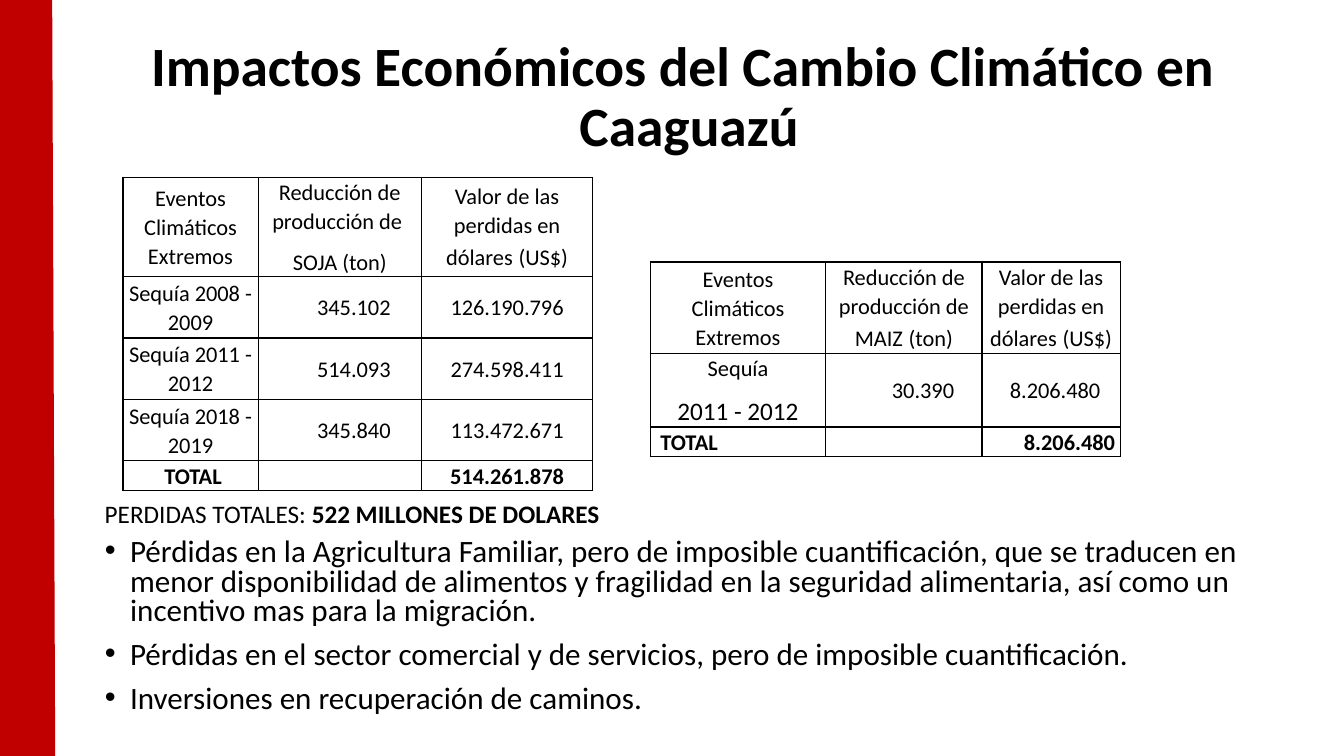
from lxml import etree
from pptx import Presentation
from pptx.dml.color import RGBColor
from pptx.enum import shapes, text
from pptx.oxml import ns
from pptx.util import Inches, Pt

COLORS = {"text": "000000", "grid": "000000", "band": "C00000"}
FONT = "Calibri"
CENTER, LEFT, RIGHT = text.PP_ALIGN.CENTER, text.PP_ALIGN.LEFT, text.PP_ALIGN.RIGHT
MIDDLE, TOP = text.MSO_ANCHOR.MIDDLE, text.MSO_ANCHOR.TOP
CELL_MARGIN = 0.05

TITLE = ["Impactos Económicos del Cambio Climático en ", "Caaguazú"]
TOTAL_LOSS = [("PERDIDAS TOTALES: ", False), ("522 MILLONES DE DOLARES", True)]
BULLETS = [
    "Pérdidas en la Agricultura Familiar, pero de imposible cuantificación, que se traducen en "
    "menor disponibilidad de alimentos y fragilidad en la seguridad alimentaria, así como un "
    "incentivo mas para la migración.",
    "Pérdidas en el sector comercial y de servicios, pero de imposible cuantificación.",
    "Inversiones en recuperación de caminos.",
]

# A cell is a list of paragraphs; a paragraph is a list of (text, size) runs.
EVENTS = [[("Eventos Climáticos Extremos", 16)]]
VALUE = [[("Valor de las perdidas en dólares", 16), (" ", 18), ("(US$)", 16)]]


def plain(words):
    return [[(words, 16)]]


SOY = {
    "place": (1.22, 1.76), "cols": [1.34, 1.62, 1.7], "rows": [0.83, 0.61, 0.61, 0.61, 0.24],
    "cells": [
        [EVENTS, [[("Reducción de producción de ", 16)], [("SOJA (ton)", 16)]], VALUE],
        [plain("Sequía 2008 - 2009"), plain("345.102"), plain("126.190.796")],
        [plain("Sequía 2011 - 2012"), plain("514.093"), plain("274.598.411")],
        [plain("Sequía 2018 - 2019"), plain("345.840"), plain("113.472.671")],
        [plain("TOTAL"), [], plain("514.261.878")],
    ],
    "indents": [0, 0.28, 0], "total_indent": 0.05,
    "total_align": [CENTER, CENTER, CENTER], "event_anchor": MIDDLE,
}
MAIZE = {
    "place": (6.45, 2.6), "cols": [1.74, 1.55, 1.37], "rows": [0.82, 0.63, 0.25],
    "cells": [
        [EVENTS, [[("Reducción de producción de MAIZ", 16), (" ", 18), ("(ton)", 16)]], VALUE],
        [[[("Sequía", 16)], [("2011 - 2012", 18)]], plain("30.390"), plain("8.206.480")],
        [plain("TOTAL"), [], plain("8.206.480")],
    ],
    "indents": [0, 0.38, 0.08], "total_indent": 0.05,
    "total_align": [LEFT, CENTER, RIGHT], "event_anchor": TOP,
}


def color(name):
    return RGBColor.from_string(COLORS[name])


def add_run(para, words, size, bold=False):
    span = para.add_run()
    span.text = words
    span.font.name = FONT
    span.font.size = Pt(size)
    span.font.bold = bold
    span.font.color.rgb = color("text")


def place(shape, left, top, width, height):
    shape.left, shape.top = Inches(left), Inches(top)
    shape.width, shape.height = Inches(width), Inches(height)


def draw_borders(cell):
    properties = cell._tc.get_or_add_tcPr()
    for index, side in enumerate(("lnL", "lnR", "lnT", "lnB")):
        line = etree.Element(ns.qn("a:" + side), w=str(Pt(1)))
        fill = etree.SubElement(line, ns.qn("a:solidFill"))
        etree.SubElement(fill, ns.qn("a:srgbClr"), val=COLORS["grid"])
        properties.insert(index, line)


def fill_cell(cell, paragraphs, align, anchor, indent, bold):
    cell.margin_left = Inches(CELL_MARGIN + indent)
    cell.margin_right = Inches(CELL_MARGIN)
    cell.margin_top = cell.margin_bottom = 0
    cell.vertical_anchor = anchor
    cell.fill.background()
    draw_borders(cell)
    frame = cell.text_frame
    if not paragraphs:
        frame.paragraphs[0]._p.get_or_add_endParaRPr().set("sz", "1600")
    for number, runs in enumerate(paragraphs):
        para = frame.add_paragraph() if number else frame.paragraphs[0]
        para.alignment = align
        para.line_spacing = 1.07
        para.space_after = Pt(8)
        for words, size in runs:
            add_run(para, words, size, bold)


def add_loss_table(page, data):
    cols, rows = data["cols"], data["rows"]
    left, top = data["place"]
    table = page.shapes.add_table(len(rows), len(cols), Inches(left), Inches(top),
                                  Inches(sum(cols)), Inches(sum(rows))).table
    table.first_row = table.horz_banding = False
    for column, width in zip(table.columns, cols):
        column.width = Inches(width)
    for row, height in zip(table.rows, rows):
        row.height = Inches(height)
    last = len(rows) - 1
    for r, line in enumerate(data["cells"]):
        for c, paragraphs in enumerate(line):
            align = data["total_align"][c] if r == last else CENTER
            anchor = data["event_anchor"] if c == 0 and 0 < r < last else MIDDLE
            indent = data["indents"][c] if 0 < r < last else 0
            if r == last and c == 0:
                indent = data["total_indent"]
            fill_cell(table.cell(r, c), paragraphs, align, anchor, indent, r == last)


def write_title(box):
    place(box, 1.22, 0.19, 11.23, 1.58)
    frame = box.text_frame
    frame.auto_size = text.MSO_AUTO_SIZE.NONE
    frame.vertical_anchor = MIDDLE
    para = frame.paragraphs[0]
    para.alignment = CENTER
    para.line_spacing = 0.9
    for number, words in enumerate(TITLE):
        if number:
            para.add_line_break()
        add_run(para, words, 39.6, True)


def write_bullets(box):
    place(box, 0.94, 5.29, 11.5, 1.89)
    frame = box.text_frame
    frame.auto_size = text.MSO_AUTO_SIZE.NONE
    for number, words in enumerate(BULLETS):
        para = frame.add_paragraph() if number else frame.paragraphs[0]
        para.line_spacing = 0.8
        para.space_before = Pt(10)
        properties = para._p.get_or_add_pPr()
        properties.set("marL", str(Inches(0.25)))
        properties.set("indent", str(Inches(-0.25)))
        etree.SubElement(properties, ns.qn("a:buFont"), typeface="Arial")
        etree.SubElement(properties, ns.qn("a:buChar"), char="•")
        add_run(para, words, 22.2)


def add_total_loss(page):
    box = page.shapes.add_textbox(Inches(0.94), Inches(4.89), Inches(11.01), Inches(0.4))
    box.text_frame.word_wrap = True
    for words, bold in TOTAL_LOSS:
        add_run(box.text_frame.paragraphs[0], words, 18, bold)


def add_side_band(page):
    band = page.shapes.add_connector(shapes.MSO_CONNECTOR.STRAIGHT,
                                     Inches(0.24), 0, Inches(0.27), Inches(7.5))
    band.line.color.rgb = color("band")
    band.line.width = Pt(40)
    etree.SubElement(band._element.spPr, ns.qn("a:effectLst"))


def main():
    deck = Presentation()
    deck.slide_width, deck.slide_height = Inches(13.33), Inches(7.5)
    page = deck.slides.add_slide(deck.slide_layouts[1])
    write_title(page.shapes.title)
    write_bullets(page.placeholders[1])
    for data in (SOY, MAIZE):
        add_loss_table(page, data)
    add_total_loss(page)
    add_side_band(page)
    deck.save("out.pptx")


if __name__ == "__main__":
    main()
